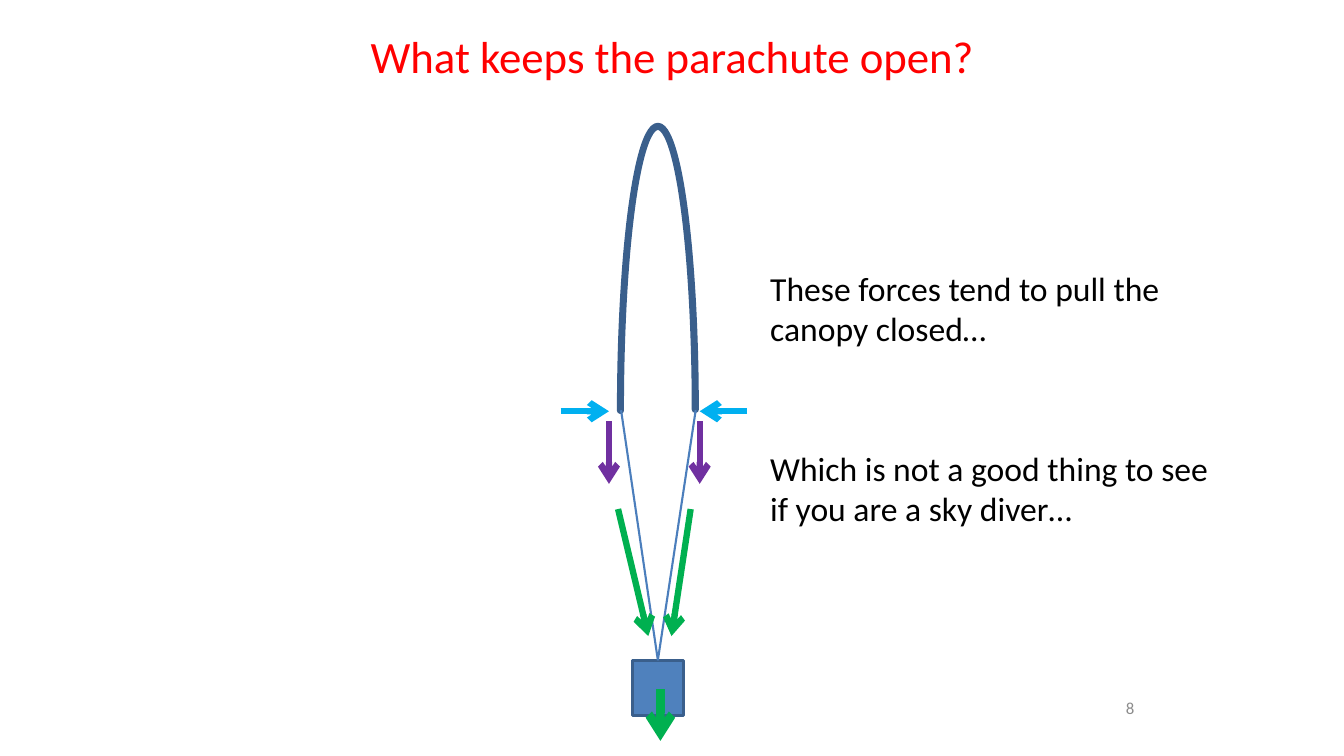
from lxml.etree import SubElement
from pptx import Presentation
from pptx.dml.color import RGBColor
from pptx.enum.shapes import MSO_CONNECTOR, MSO_SHAPE
from pptx.enum.text import MSO_ANCHOR, PP_ALIGN
from pptx.oxml.ns import qn
from pptx.util import Inches, Pt

RED = RGBColor(0xFF, 0x00, 0x00)
BLACK = RGBColor(0x00, 0x00, 0x00)
GRAY = RGBColor(0x8C, 0x8C, 0x8C)
BLUE = RGBColor(0x4F, 0x81, 0xBD)
DARK_BLUE = RGBColor(0x3A, 0x5F, 0x8C)
CORD_BLUE = RGBColor(0x4B, 0x7E, 0xBC)
GREEN = RGBColor(0x00, 0xB0, 0x50)
SKY = RGBColor(0x00, 0xB0, 0xF0)
PURPLE = RGBColor(0x70, 0x30, 0xA0)

CELL = Inches(0.1)  # the slide is a grid of 133.3 columns by 75 rows


def grid(*counts):
    """Turn counts of columns or rows into lengths."""
    return [round(count * CELL) for count in counts]


def add_line(start, end, color, weight, arrow=True):
    line = slide.shapes.add_connector(MSO_CONNECTOR.STRAIGHT, *grid(*start, *end))
    line.line.color.rgb = color
    line.line.width = Pt(weight)
    properties = line._element.spPr
    if arrow:
        SubElement(properties.find(qn("a:ln")), qn("a:tailEnd"), type="arrow")
    SubElement(properties, qn("a:effectLst"))
    return line


deck = Presentation()
deck.slide_width, deck.slide_height = grid(133.3, 75)
slide = deck.slides.add_slide(deck.slide_layouts[6])

# Canopy and load
solids = []
for preset, place, weight in [
    (MSO_SHAPE.BLOCK_ARC, (61.5, 12.5, 7.5, 56.5), 4.5),
    (MSO_SHAPE.RECTANGLE, (62.7, 65.5, 5.1, 5.5), 2),
]:
    solid = slide.shapes.add_shape(preset, *grid(*place))
    solid.shadow.inherit = False
    solid.fill.solid()
    solid.fill.fore_color.rgb = BLUE
    solid.line.color.rgb = DARK_BLUE
    solid.line.width = Pt(weight)
    solids.append(solid)
canopy, load = solids
for index, value in enumerate((108, 215.04, 0.01)):
    canopy.adjustments[index] = value

# Cords and forces, left side then right side
for hem, force, outer, pull_start, pull_end in [
    (61.6, 60.4, 55.6, 61.3, 64.3),
    (69, 69.4, 74.1, 68.5, 66.6),
]:
    cord = add_line((hem, 40.7), (65.3, 65.5), CORD_BLUE, 1.5, arrow=False)
    cord.end_connect(load, 0)
    add_line((pull_start, 50.5), (pull_end, 63.1), GREEN, 4.5)
    add_line((outer, 40.8), (force, 40.8), SKY, 4.5)
    add_line((force, 41.8), (force, 48), PURPLE, 4.5)
add_line((65.5, 68.4), (65.5, 73.5), GREEN, 6)

for text, place, size, color, alignment, anchor in [
    ("What keeps the parachute open?", (21.7, 1.3, 90, 8.5),
     32, RED, PP_ALIGN.CENTER, MSO_ANCHOR.MIDDLE),
    ("These forces tend to pull the canopy closed…", (75.4, 26.1, 45.2, 12.1),
     24, BLACK, PP_ALIGN.LEFT, MSO_ANCHOR.TOP),
    ("Which is not a good thing to see if you are a sky diver…", (75.4, 43.9, 47.6, 9.1),
     24, BLACK, PP_ALIGN.LEFT, MSO_ANCHOR.TOP),
    ("8", (90.2, 68.2, 23.3, 4), 12, GRAY, PP_ALIGN.RIGHT, MSO_ANCHOR.MIDDLE),
]:
    box = slide.shapes.add_textbox(*grid(*place))
    box.text_frame.word_wrap = True
    box.text_frame.vertical_anchor = anchor
    para = box.text_frame.paragraphs[0]
    para.alignment = alignment
    span = para.add_run()
    span.text = text
    for name, value in {"name": "Calibri", "size": Pt(size)}.items():
        setattr(span.font, name, value)
    span.font.color.rgb = color

deck.save("out.pptx")
